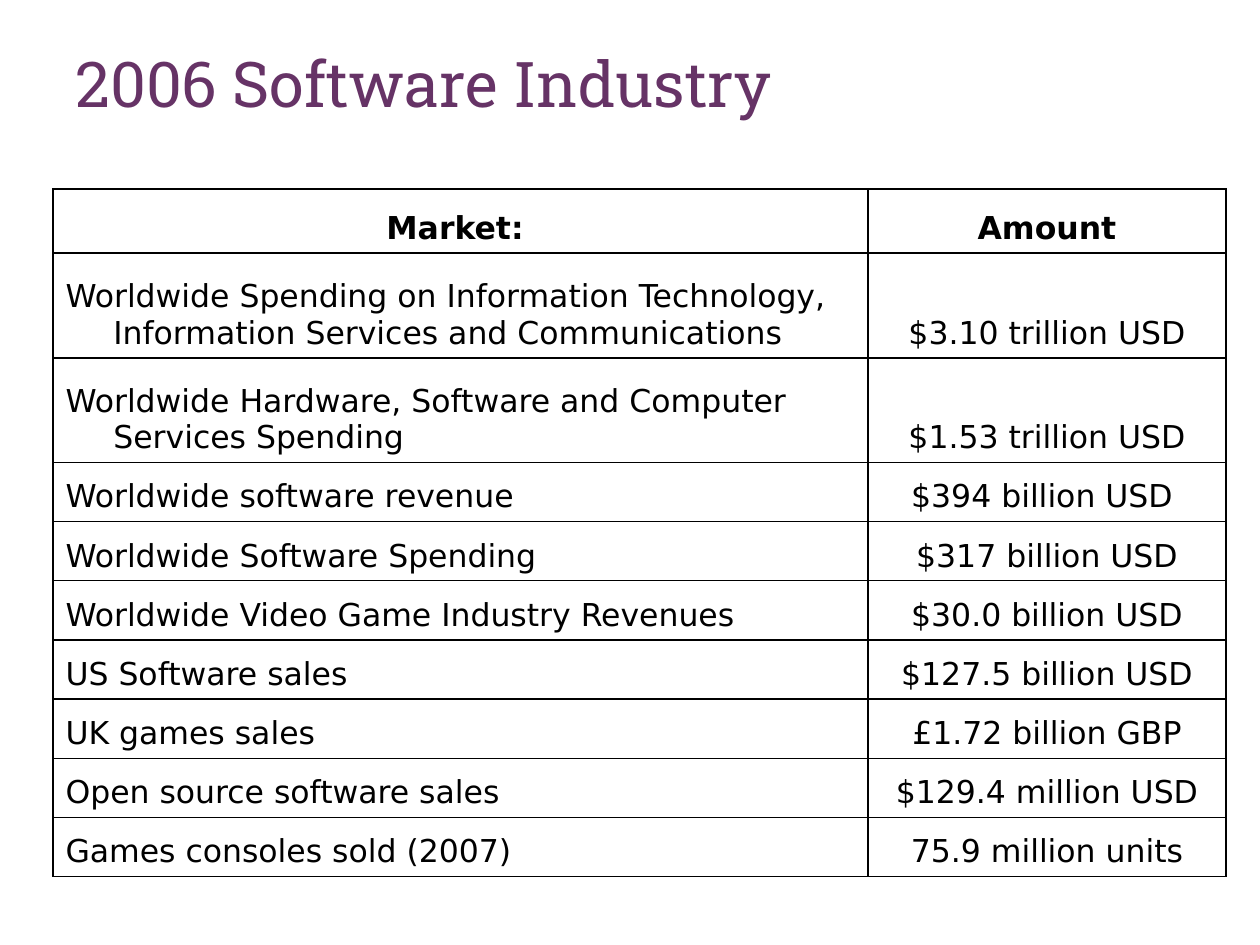
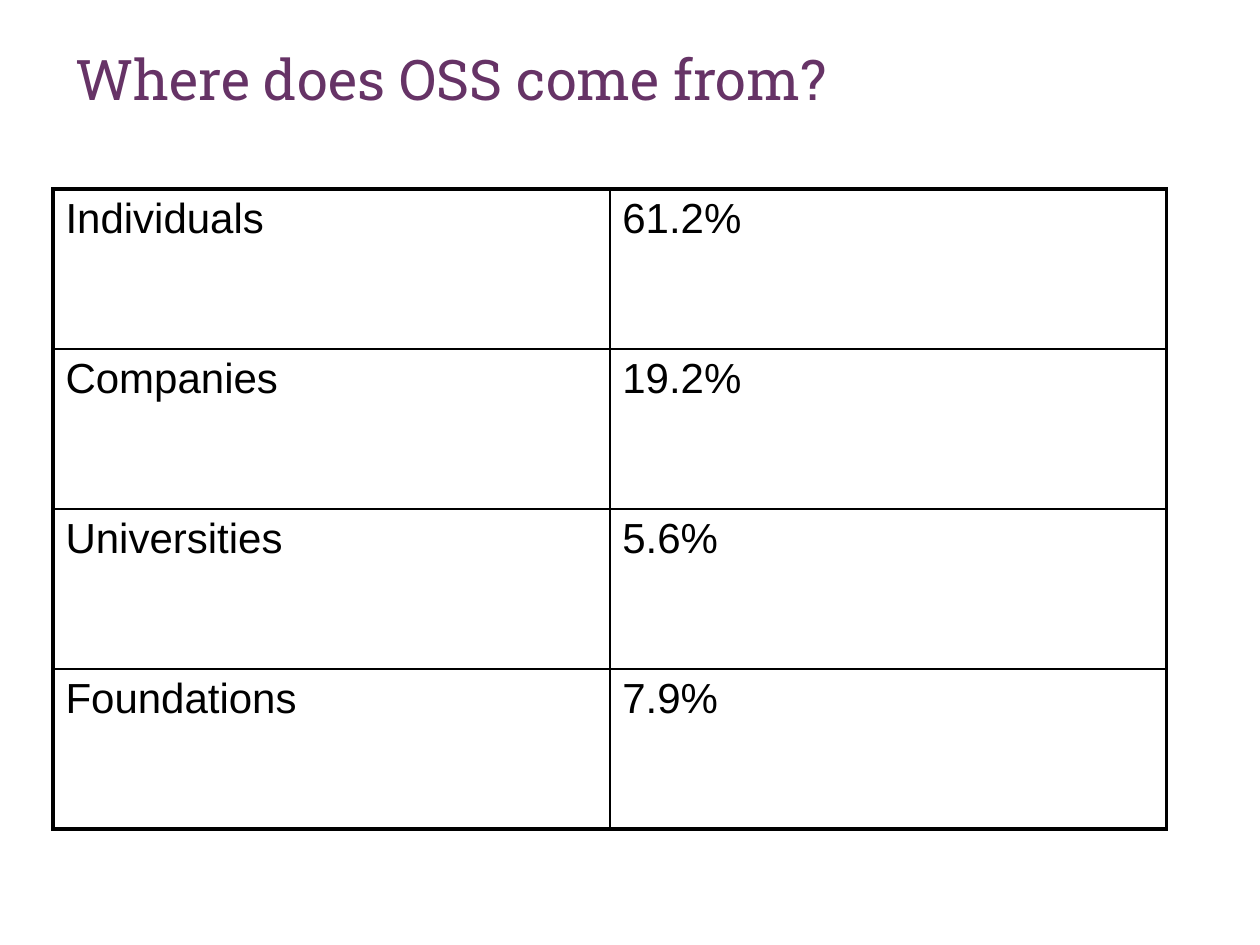
"""Build two slides with tables on the software industry and the sources of OSS."""
import lxml.etree
import pptx
import pptx.dml.color
import pptx.enum.text
import pptx.oxml.ns
import pptx.util

SCALE = 9144
COLORS = {"title": "663366", "text": "000000", "border": "000000"}
ALIGN = pptx.enum.text.PP_ALIGN
ANCHOR = pptx.enum.text.MSO_ANCHOR
TABLE_LEFT, TABLE_TOP = 42, 150
INNER_LINE = 1

SLIDES = [
    {
        "title": "2006 Software Industry",
        "title_size": 36,
        "columns": [647, 284],
        "rows": [51] + [83] * 2 + [47] * 7,
        "outer_line": 1,
        "font": {"name": "DejaVu Sans", "size": pptx.util.Pt(18)},
        "anchor": ANCHOR.BOTTOM,
        "alignments": [ALIGN.LEFT, ALIGN.CENTER],
        "hanging": 38,
        "header": True,
        "cells": [
            ("Market: ", "Amount"),
            ("Worldwide Spending on Information Technology, "
             "Information Services and Communications", "$3.10 trillion USD"),
            ("Worldwide Hardware, Software and Computer Services Spending",
             "$1.53 trillion USD"),
            ("Worldwide software revenue", "$394 billion USD "),
            ("Worldwide Software Spending", "$317 billion USD"),
            ("Worldwide Video Game Industry Revenues", "$30.0 billion USD"),
            ("US Software sales", "$127.5 billion USD"),
            ("UK games sales", "£1.72 billion GBP"),
            ("Open source software sales", "$129.4 million USD"),
            ("Games consoles sold (2007)", "75.9 million units"),
        ],
    },
    {
        "title": "Where does OSS come from?",
        "title_size": 32,
        "columns": [442] * 2,
        "rows": [127] * 4,
        "outer_line": 2.25,
        "font": {"name": "Arial", "size": pptx.util.Pt(24)},
        "anchor": ANCHOR.TOP,
        "alignments": [ALIGN.LEFT, ALIGN.LEFT],
        "hanging": 0,
        "header": False,
        "cells": [
            ("Individuals", "61.2%"),
            ("Companies", "19.2%"),
            ("Universities", "5.6%"),
            ("Foundations", "7.9%"),
        ],
    },
]


def write(para, text, color, font_format):
    """Add one formatted span to a paragraph."""
    span = para.add_run()
    span.text = text
    span.font.color.rgb = pptx.dml.color.RGBColor.from_string(COLORS[color])
    for name, value in font_format.items():
        setattr(span.font, name, value)


def draw_borders(cell, widths):
    """Draw the left, right, top and bottom borders of a cell, widths in points."""
    properties = cell._tc.get_or_add_tcPr()
    for position, (side, width) in enumerate(zip("LRTB", widths)):
        line = lxml.etree.Element(pptx.oxml.ns.qn(f"a:ln{side}"), w=str(pptx.util.Pt(width)))
        fill = lxml.etree.SubElement(line, pptx.oxml.ns.qn("a:solidFill"))
        lxml.etree.SubElement(fill, pptx.oxml.ns.qn("a:srgbClr"), val=COLORS["border"])
        properties.insert(position, line)


deck = pptx.Presentation()
deck.slide_width, deck.slide_height = 1000 * SCALE, 750 * SCALE

for content in SLIDES:
    page = deck.slides.add_slide(deck.slide_layouts[6])

    box = page.shapes.add_textbox(50 * SCALE, 30 * SCALE, 900 * SCALE, 125 * SCALE)
    box.text_frame.word_wrap = True
    title_font = {"name": "Roboto Slab", "size": pptx.util.Pt(content["title_size"])}
    write(box.text_frame.paragraphs[0], content["title"], "title", title_font)

    columns, rows = content["columns"], content["rows"]
    table = page.shapes.add_table(
        len(rows), len(columns), TABLE_LEFT * SCALE, TABLE_TOP * SCALE,
        sum(columns) * SCALE, sum(rows) * SCALE).table
    table.first_row = table.horz_banding = False
    for column, width in zip(table.columns, columns):
        column.width = width * SCALE
    for row, height in zip(table.rows, rows):
        row.height = height * SCALE

    for row_index, texts in enumerate(content["cells"]):
        is_header = content["header"] and row_index == 0
        for column_index, text in enumerate(texts):
            cell = table.cell(row_index, column_index)
            cell.fill.background()
            cell.vertical_anchor = content["anchor"]
            para = cell.text_frame.paragraphs[0]
            para.alignment = ALIGN.CENTER if is_header else content["alignments"][column_index]
            indent = content["hanging"] * SCALE
            para_properties = para._p.get_or_add_pPr()
            for name, value in {"marL": indent, "indent": -indent}.items():
                para_properties.set(name, str(value))
            write(para, text, "text", {**content["font"], "bold": is_header})
            on_edge = (column_index == 0, column_index == len(columns) - 1,
                       row_index == 0, row_index == len(rows) - 1)
            draw_borders(cell, [content["outer_line"] if edge else INNER_LINE for edge in on_edge])

deck.save("out.pptx")
